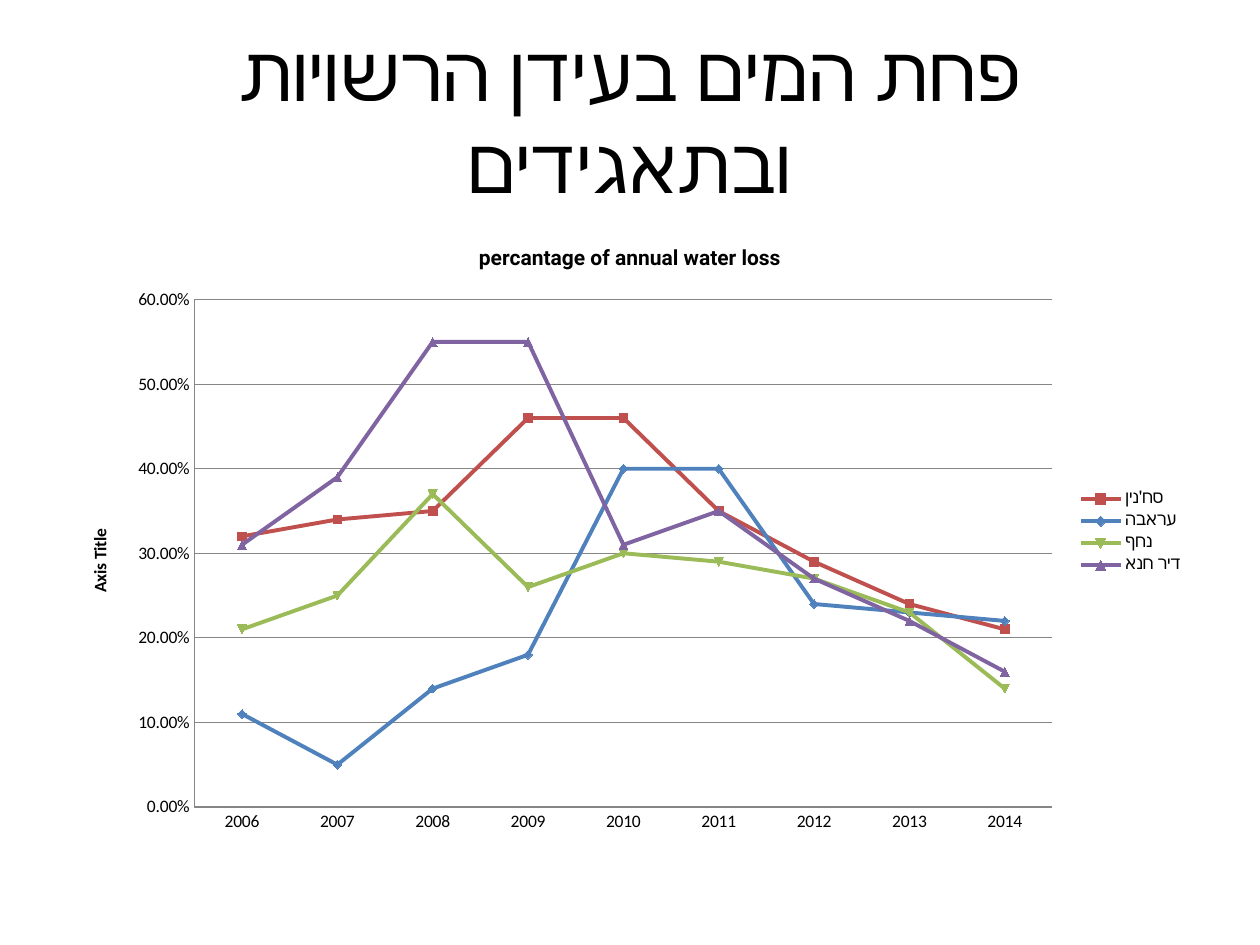
from pptx import Presentation
from pptx import util as u
from pptx.chart import data as chart_data
from pptx.dml import color
from pptx.enum import chart as charts, text

YEARS = [str(year) for year in range(2006, 2015)]
# Town: line colour, yearly share of water lost
TOWNS = {
    "סח'נין": ("C0504D", [.32, .34, .35, .46, .46, .35, .29, .24, .21]),
    "עראבה": ("4F81BD", [.11, .05, .14, .18, .4, .4, .24, .23, .22]),
    "נחף": ("9BBB59", [.21, .25, .37, .26, .3, .29, .27, .23, .14]),
    "דיר חנא": ("8064A2", [.31, .39, .55, .55, .31, .35, .27, .22, .16]),
}


def rgb(value):
    return color.RGBColor.from_string(value)


class SlideBuilder:
    ink, grid = "000000", "868686"
    body_font, chart_title_font = "Calibri", "Roboto"

    def __init__(self, deck):
        self.page = deck.slides.add_slide(deck.slide_layouts[5])

    def style_font(self, font, size, name=None, bold=False):
        font.size, font.bold, font.name = u.Pt(size), bold, name or self.body_font
        font.color.rgb = rgb(self.ink)

    def title(self, words, left, top, width, height):
        box = self.page.shapes.title
        box.left, box.top, box.width, box.height = map(u.Pt, (left, top, width, height))
        frame = box.text_frame
        frame.text = words
        frame.word_wrap = True
        frame.vertical_anchor = text.MSO_ANCHOR.MIDDLE
        para = frame.paragraphs[0]
        para.alignment = text.PP_ALIGN.CENTER
        para._p.get_or_add_pPr().set("rtl", "1")
        self.style_font(para.font, 44)

    def heading(self, owner, words, size, name=None):
        owner.text_frame.text = words
        self.style_font(owner.text_frame.paragraphs[0].font, size, name, bold=True)

    def axis(self, axis):
        axis.major_tick_mark = axis.minor_tick_mark = charts.XL_TICK_MARK.NONE
        self.outline(axis.format.line, self.grid, 0.75)

    def outline(self, line, shade, width):
        line.color.rgb = rgb(shade)
        line.width = u.Pt(width)

    def line_chart(self, heading, axis_heading, left, top, width, height):
        data = chart_data.CategoryChartData(number_format="0.00%")
        data.categories = YEARS
        for town, (_, shares) in TOWNS.items():
            data.add_series(town, shares)
        chart = self.page.shapes.add_chart(
            charts.XL_CHART_TYPE.LINE_MARKERS,
            *map(u.Pt, (left, top, width, height)), data).chart
        self.style_font(chart.font, 10)
        self.heading(chart.chart_title, heading, 12, self.chart_title_font)
        chart.chart_title.include_in_layout = False

        # Legend
        chart.has_legend = True
        chart.legend.position = charts.XL_LEGEND_POSITION.RIGHT
        chart.legend.include_in_layout = False

        # Axes
        self.axis(chart.category_axis)
        values = chart.value_axis
        self.axis(values)
        values.minimum_scale, values.maximum_scale, values.major_unit = 0, 0.6, 0.1
        values.tick_labels.number_format = "0.00%"
        values.tick_labels.number_format_is_linked = False
        self.outline(values.major_gridlines.format.line, self.grid, 0.75)
        self.heading(values.axis_title, axis_heading, 10)
        turned = chart.element.xpath(".//c:valAx/c:title//a:bodyPr")[0]
        turned.set("rot", "-5400000")
        turned.set("vert", "horz")

        # Series
        chart.plots[0].vary_by_categories = False
        for series, (shade, _) in zip(chart.plots[0].series, TOWNS.values()):
            series.smooth = False
            self.outline(series.format.line, shade, 2.25)
            series.marker.size = 5
            series.marker.format.fill.solid()
            series.marker.format.fill.fore_color.rgb = rgb(shade)
            self.outline(series.marker.format.line, shade, 0.75)


def main():
    deck = Presentation()
    deck.slide_width, deck.slide_height = u.Pt(720), u.Pt(540)
    slide = SlideBuilder(deck)
    slide.title("פחת המים בעידן הרשויות ובתאגידים", 36, 21.6, 648, 90)
    slide.line_chart("percantage of annual water loss", "Axis Title",
                     36, 126, 648, 356.4)
    deck.save("out.pptx")


if __name__ == "__main__":
    main()
